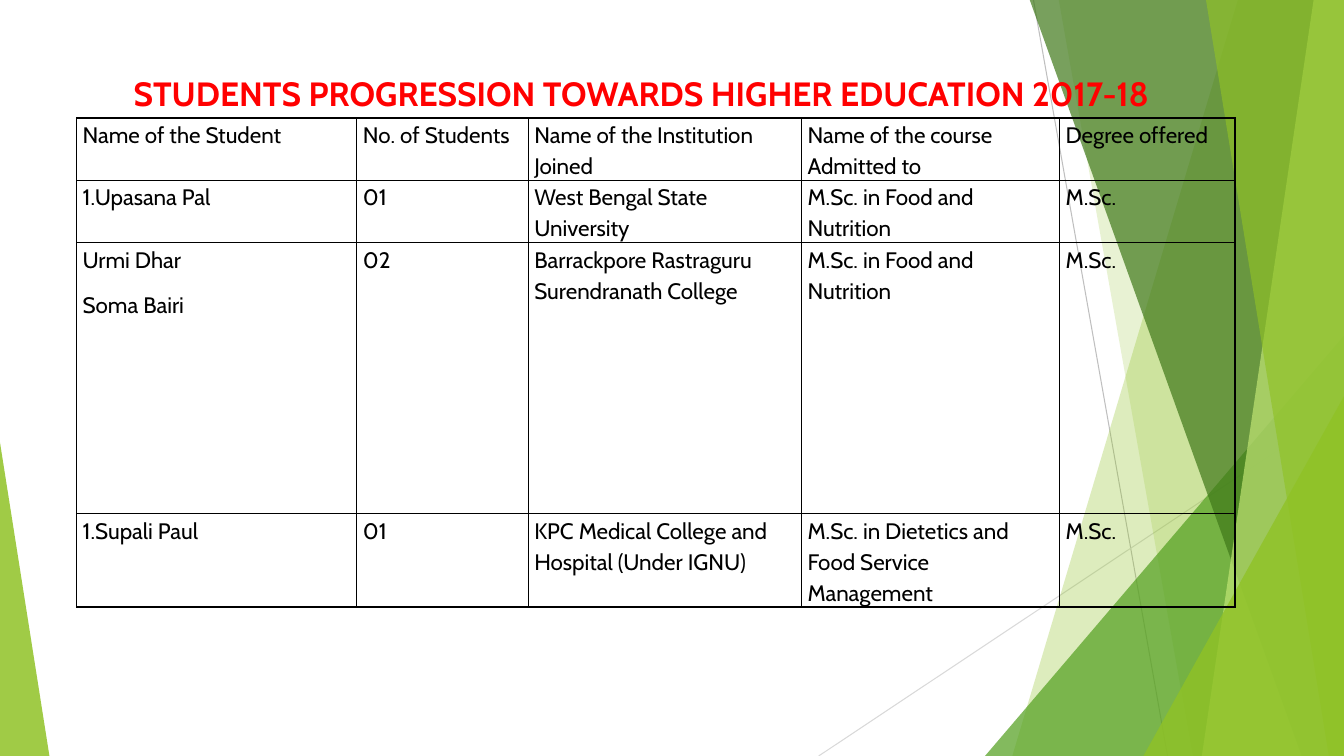
import pptx
import pptx.util
import pptx.dml.color
import pptx.enum.shapes
import pptx.enum.text
import pptx.oxml
import pptx.oxml.ns

RGB = pptx.dml.color.RGBColor
BLACK = RGB(0, 0, 0)
RED = RGB(255, 0, 0)
LIME = RGB(0x90, 0xC2, 0x26)
LEAF = RGB(0x54, 0xA0, 0x21)
PINE = RGB(0x3F, 0x78, 0x19)
PALE = RGB(0xC0, 0xE4, 0x74)
GREY = RGB(0xBF, 0xBF, 0xBF)
MIST = RGB(0xD9, 0xD9, 0xD9)
FONT = "Cabin"
SCALE = 9144
WIDE, HIGH = 1333, 750

ROWS = [
    ["Name of the Student", "No. of Students", "Name of the Institution Joined",
     "Name of the course Admitted to", "Degree offered"],
    ["1.Upasana Pal", "01", "West Bengal State University",
     "M.Sc. in Food and Nutrition", "M.Sc."],
    ["Urmi Dhar\nSoma Bairi", "02", "Barrackpore Rastraguru Surendranath College",
     "M.Sc. in Food and Nutrition", "M.Sc."],
    ["1.Supali Paul", "01", "KPC Medical College and Hospital (Under IGNU)",
     "M.Sc. in Dietetics and Food Service Management", "M.Sc."],
]


def px(num):
    return pptx.util.Emu(num * SCALE)


def add_xml(parent, tag, **attrs):
    node = pptx.oxml.ns.qn(tag)
    child = parent.makeelement(node, attrs)
    parent.append(child)
    return child


def style(para, size, color, bold=False):
    para.font.name = FONT
    para.font.size = pptx.util.Pt(size)
    para.font.bold = bold
    para.font.color.rgb = color


def paint(shape, color, alpha):
    shape.shadow.inherit = False
    shape.line.fill.background()
    shape.fill.solid()
    shape.fill.fore_color.rgb = color
    tint = shape.fill._xPr.find(".//" + pptx.oxml.ns.qn("a:srgbClr"))
    add_xml(tint, "a:alpha", val=str(alpha * 1000))


def draw_line(shapes, ends, color):
    kind = pptx.enum.shapes.MSO_CONNECTOR.STRAIGHT
    line = shapes.add_connector(kind, *map(px, ends))
    line.line.color.rgb = color
    line.line.width = pptx.util.Pt(0.75)
    add_xml(line._element.spPr, "a:effectLst")


def draw_band(shapes, box, top, foot, color, alpha):
    left, head, width, height = box
    right, base = left + width, head + height
    pen = shapes.build_freeform(left + top, head, scale=SCALE)
    pen.add_line_segments([(right, head), (right, base), (left + foot, base)])
    paint(pen.convert_to_shape(), color, alpha)


def draw_peak(shapes, box, apex, color, alpha):
    kind = pptx.enum.shapes.MSO_SHAPE.ISOSCELES_TRIANGLE
    peak = shapes.add_shape(kind, *map(px, box))
    peak.adjustments[0] = apex
    paint(peak, color, alpha)


def draw_decor(shapes, box):
    left, top, width, height = box
    right, base = left + width, top + height

    def band(size, head, foot, color, alpha):
        area = (right - size, top - 1, size, height + 1)
        draw_band(shapes, area, head, foot, color, alpha)

    def peak(wide, tall, color, alpha):
        area = (right - wide, base - tall, wide, tall)
        draw_peak(shapes, area, 1, color, alpha)

    draw_line(shapes, (right - 308, top, right - 175, base), GREY)
    draw_line(shapes, (right, top + 403, right - 521, base), MIST)
    band(329, 224, 0, LIME, 30)
    band(283, 0, 133, LIME, 20)
    peak(356, 417, LEAF, 72)
    band(312, 0, 270, PINE, 70)
    band(141, 111, 0, PALE, 70)
    band(137, 0, 122, LIME, 65)
    peak(199, 357, LIME, 80)
    draw_peak(shapes, (left, base - 311, 49, 311), 0, LIME, 85)


def put_title(shapes, box):
    title = shapes.title
    shapes._spTree.append(title._element)
    title.left, title.top, title.width, title.height = map(px, box)
    frame = title.text_frame
    frame.text = "STUDENTS PROGRESSION TOWARDS HIGHER EDUCATION 2017-18"
    frame.word_wrap = True
    frame.auto_size = pptx.enum.text.MSO_AUTO_SIZE.NONE
    frame.vertical_anchor = pptx.enum.text.MSO_ANCHOR.TOP
    para = frame.paragraphs[0]
    para.alignment = pptx.enum.text.PP_ALIGN.CENTER
    style(para, 24, RED, True)


def fill_cell(cell, text):
    cell.text = text
    cell.margin_left = cell.margin_right = px(6)
    cell.margin_top = cell.margin_bottom = px(0)
    for para in cell.text_frame.paragraphs:
        para.line_spacing = 1.15
        para.space_after = pptx.util.Pt(10)
        style(para, 16, BLACK)
    props = cell._tc.get_or_add_tcPr()
    for side in "LRTB":
        edge = add_xml(props, "a:ln" + side, w="12700")
        fill = add_xml(edge, "a:solidFill")
        add_xml(fill, "a:srgbClr", val=str(BLACK))
    cell.fill.background()


def put_table(shapes, box):
    frame = shapes.add_table(len(ROWS), len(ROWS[0]), *map(px, box))
    table = frame.table
    table.first_row = table.horz_banding = False
    for col, width in zip(table.columns, (278, 170, 271, 256, 174)):
        col.width = px(width)
    for row, height in zip(table.rows, (54, 54, 269, 85)):
        row.height = px(height)
    for row, texts in zip(table.rows, ROWS):
        for cell, text in zip(row.cells, texts):
            fill_cell(cell, text)


def main():
    deck = pptx.Presentation()
    deck.slide_width, deck.slide_height = px(WIDE), px(HIGH)
    slide = deck.slides.add_slide(deck.slide_layouts[5])
    draw_decor(slide.shapes, (0, 0, WIDE, HIGH))
    put_title(slide.shapes, (74, 67, 1124, 71))
    put_table(slide.shapes, (76, 117, 1149, 462))
    deck.save("out.pptx")


if __name__ == "__main__":
    main()
